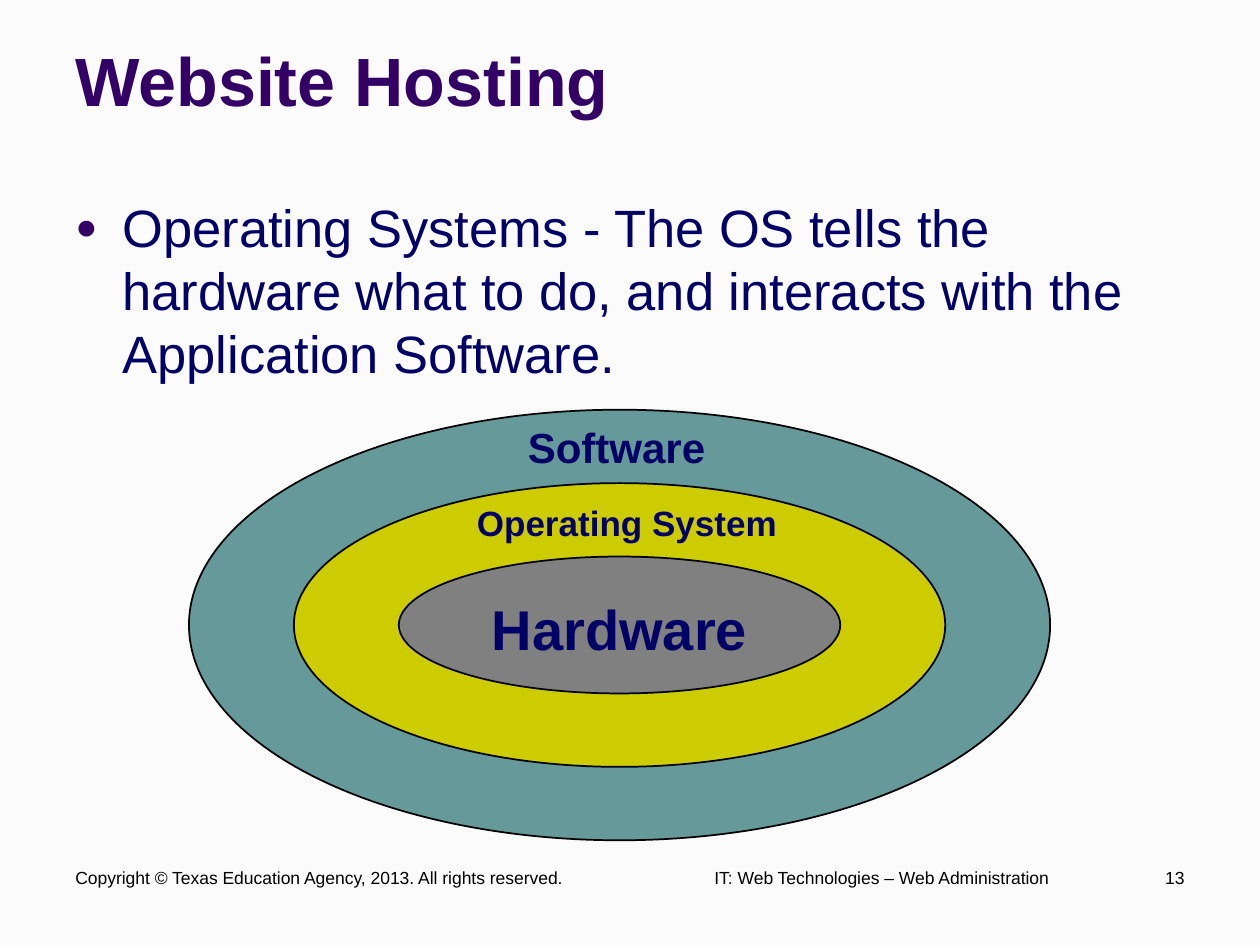
from lxml.etree import SubElement
from pptx import Presentation
from pptx.dml.color import RGBColor
from pptx.enum.shapes import MSO_SHAPE as Shape
from pptx.enum.text import MSO_ANCHOR as Anchor, PP_ALIGN as Align
from pptx.oxml.ns import qn
from pptx.util import Cm, Pt

# Content: positions and sizes are (left, top, width, height) in centimetres
TITLE = ("Website Hosting", (1.27, 0.33, 17.35, 2.21))
BULLET = (
    "Operating Systems - The OS tells the hardware what to do, "
    "and interacts with the Application Software.",
    (1.27, 3.81, 22.86, 12.24),
)
RING_COLORS = ["669999", "CCCC00", "808080"]  # outermost first
RING_CENTER = (12.49, 12.6)
RING_SIZE = (17.36, 8.68)
RING_STEP = (4.23, 2.96)
RING_LABELS = [
    ("Hardware", 32, (9.53, 11.86, 5.92, 1.63)),
    ("Software", 24, (9.04, 8.38, 6.78, 1.3)),
    ("Operating System", 20, (9.25, 9.98, 6.78, 1.12)),
]
FOOTER_TOP, FOOTER_HEIGHT = 17.35, 1.27
FOOTERS = [  # text, left, width, alignment
    ("Copyright © Texas Education Agency, 2013. All rights reserved.", 1.27, 13.34, Align.LEFT),
    ("IT: Web Technologies – Web Administration", 8.69, 12.7, Align.RIGHT),
    ("13", 18.21, 5.92, Align.RIGHT),
]
THEME = {
    "font": "Arial",
    "background": "FBFBFB",
    "title": "330066",
    "text": "000066",
    "footer": "000000",
    "outline": "000000",
    "title_size": 39,
    "body_size": 30,
    "footer_size": 10,
}


def rgb(name):
    return RGBColor.from_string(name)


def add_bullet(paragraph, color, percent, indent):
    properties = paragraph._p.get_or_add_pPr()
    properties.set("marL", str(Cm(indent)))
    properties.set("indent", str(-Cm(indent)))
    bullet_color = SubElement(properties, qn("a:buClr"))
    SubElement(bullet_color, qn("a:srgbClr"), val=color)
    SubElement(properties, qn("a:buSzPct"), val=str(percent * 1000))
    SubElement(properties, qn("a:buFont"), typeface=THEME["font"])
    SubElement(properties, qn("a:buChar"), char="●")


def add_text(slide, text, box, *, size, color, bold=False,
             align=Align.LEFT, anchor=Anchor.TOP, bullet=False):
    frame = slide.shapes.add_textbox(*map(Cm, box)).text_frame
    frame.word_wrap = True
    frame.vertical_anchor = anchor
    paragraph = frame.paragraphs[0]
    paragraph.text = text
    paragraph.alignment = align
    if bullet:
        add_bullet(paragraph, THEME["title"], percent=70, indent=0.95)
    font = paragraph.font
    font.name, font.size, font.bold = THEME["font"], Pt(size), bold
    font.color.rgb = rgb(color)


def add_ring(slide, level, color):
    width, height = (size - level * step for size, step in zip(RING_SIZE, RING_STEP))
    left, top = RING_CENTER[0] - width / 2, RING_CENTER[1] - height / 2
    ring = slide.shapes.add_shape(Shape.OVAL, *map(Cm, (left, top, width, height)))
    ring.shadow.inherit = False
    ring.fill.solid()
    ring.fill.fore_color.rgb = rgb(color)
    ring.line.color.rgb = rgb(THEME["outline"])
    ring.line.width = Pt(1)


def main():
    presentation = Presentation()
    presentation.slide_width, presentation.slide_height = Cm(25.4), Cm(19.05)
    slide = presentation.slides.add_slide(presentation.slide_layouts[6])
    slide.background.fill.solid()
    slide.background.fill.fore_color.rgb = rgb(THEME["background"])

    # Title and bullet
    add_text(slide, *TITLE, size=THEME["title_size"], color=THEME["title"],
             bold=True, anchor=Anchor.BOTTOM)
    add_text(slide, *BULLET, size=THEME["body_size"], color=THEME["text"], bullet=True)

    # Nested layers and their labels
    for level, color in enumerate(RING_COLORS):
        add_ring(slide, level, color)
    for text, size, box in RING_LABELS:
        add_text(slide, text, box, size=size, color=THEME["text"], bold=True,
                 align=Align.CENTER)

    # Footer
    for text, left, width, align in FOOTERS:
        add_text(slide, text, (left, FOOTER_TOP, width, FOOTER_HEIGHT),
                 size=THEME["footer_size"], color=THEME["footer"], align=align)

    presentation.save("out.pptx")


if __name__ == "__main__":
    main()
